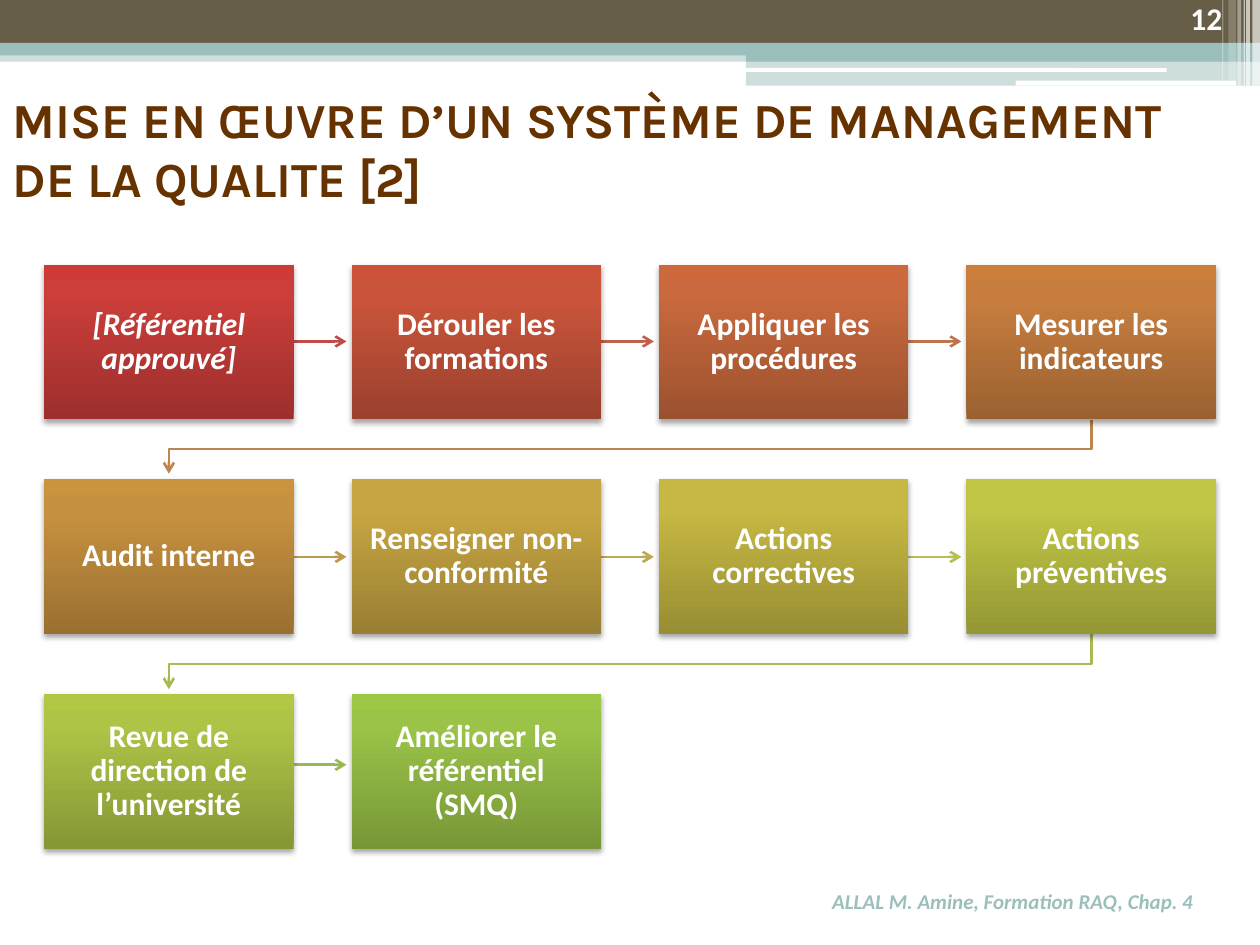
from dataclasses import dataclass

from pptx import Presentation
from pptx.dml.color import RGBColor
from pptx.enum.shapes import MSO_CONNECTOR, MSO_SHAPE
from pptx.enum.text import MSO_ANCHOR, MSO_AUTO_SIZE, PP_ALIGN
from pptx.oxml import parse_xml
from pptx.oxml.ns import nsdecls, qn
from pptx.util import Inches, Pt

RECTANGLE, ROUNDED = MSO_SHAPE.RECTANGLE, MSO_SHAPE.ROUNDED_RECTANGLE
STRAIGHT = MSO_CONNECTOR.STRAIGHT
LEFT, CENTER, RIGHT = PP_ALIGN.LEFT, PP_ALIGN.CENTER, PP_ALIGN.RIGHT
TOP, MIDDLE, BOTTOM = MSO_ANCHOR.TOP, MSO_ANCHOR.MIDDLE, MSO_ANCHOR.BOTTOM
GROW = MSO_AUTO_SIZE.SHAPE_TO_FIT_TEXT


@dataclass(frozen=True)
class Theme:
    white: str = "FFFFFF"
    olive: str = "675E47"
    teal: str = "9CBEBD"
    brown: str = "663300"
    body_font: str = "Calibri"
    title_font: str = "Karla"
    title_size: int = 28
    body_size: int = 18
    footer_size: int = 12
    line_width: float = 1.5


THEME = Theme()

# Header: left, top, width, height, colour, opacity in percent
HEADER_BANDS = [
    (0, 0.4, 10, 0.09, THEME.teal, 50),
    (0, 0, 10, 0.34, THEME.olive, 100),
    (0, 0.34, 10, 0.1, THEME.teal, 100),
    (5.92, 0.39, 4.08, 0.1, THEME.teal, 100),
    (5.92, 0.48, 4.08, 0.2, THEME.teal, 50),
]
HEADER_LINES = [(5.91, 0.54, 3.35, 0.03), (8.06, 0.64, 1.75, 0.04)]
# Header stripes: left, width, height, opacity in percent
HEADER_STRIPES = [
    (9.94, 0.06, 0.68, 65),
    (9.89, 0.03, 0.68, 65),
    (9.87, 0.01, 0.68, 60),
    (9.82, 0.03, 0.68, 40),
    (9.75, 0.06, 0.64, 20),
    (9.7, 0.01, 0.64, 30),
]

# Steps: text, gradient from bottom to top, colour of the arrow to the next step
STEPS = [
    ("[Référentiel approuvé]", ("9C2F2D", "CB3E3A", "CE3B37"), "BF4C48"),
    ("Dérouler les formations", ("9B412E", "CA543B", "CE5239"), "BE604A"),
    ("Appliquer les procédures", ("9B512F", "C9693D", "CD693B"), "BD734C"),
    ("Mesurer les indicateurs", ("9A6130", "C87E3F", "CC7E3C"), "BD864D"),
    ("Audit interne", ("9A7031", "C79240", "CB933E"), "BC994F"),
    ("Renseigner non-conformité", ("997F33", "C7A542", "CAA740"), "BBAA50"),
    ("Actions correctives", ("988E34", "C6B843", "C9BB41"), "BABB52"),
    ("Actions préventives", ("949835", "C0C545", "C3C843"), "A9BA53"),
    ("Revue de direction de l’université", ("859736", "ADC446", "B0C844"), "98B955"),
    ("Améliorer le référentiel (SMQ)", ("779737", "9BC348", "9DC746"), None),
]
GRADIENT_POSITIONS = (0, 80, 100)
COLUMNS = 4
GRID_LEFT, BOX_WIDTH, BOX_HEIGHT, COLUMN_GAP = 0.35, 1.98, 1.23, 0.46
ROW_TOPS = (2.1, 3.8, 5.51)
ARROW_HEIGHTS = (2.71, 4.42, 6.07)
ARROW_MARGIN = 0.04


def write_text(frame, text, *, font=THEME.body_font, size=THEME.body_size,
               color=THEME.white, bold=True, italic=False, align=LEFT,
               anchor=TOP, inset=None, line_spacing=None):
    frame.word_wrap = True
    frame.vertical_anchor = anchor
    if inset is not None:
        frame.margin_left = frame.margin_right = Inches(inset)
        frame.margin_top = frame.margin_bottom = Inches(inset)
    paragraph = frame.paragraphs[0]
    paragraph.alignment = align
    if line_spacing:
        paragraph.line_spacing = line_spacing
    run = paragraph.add_run()
    run.text = text
    run.font.name, run.font.size = font, Pt(size)
    run.font.bold, run.font.italic = bold, italic
    run.font.color.rgb = RGBColor.from_string(color)


class SlideBuilder:
    def __init__(self, presentation, theme):
        self.theme = theme
        self.slide = presentation.slides.add_slide(presentation.slide_layouts[5])

    def title(self, text, *box):
        title = self.slide.shapes.title
        title.left, title.top, title.width, title.height = map(Inches, box)
        write_text(title.text_frame, text, font=self.theme.title_font,
                   size=self.theme.title_size, color=self.theme.brown)
        title.text_frame.auto_size = GROW

    def label(self, text, *box, **text_format):
        label = self.slide.shapes.add_textbox(*map(Inches, box))
        write_text(label.text_frame, text, **text_format)

    def bar(self, *box, color, opacity=100, kind=RECTANGLE):
        shape = self.slide.shapes.add_shape(kind, *map(Inches, box))
        shape.shadow.inherit = False
        shape.line.fill.background()
        shape.fill.solid()
        shape.fill.fore_color.rgb = RGBColor.from_string(color)
        if opacity < 100:
            fill_color = shape.element.spPr.find(qn("a:solidFill"))[0]
            fill_color.append(parse_xml(
                f'<a:alpha {nsdecls("a")} val="{opacity * 1000}"/>'))

    def step_box(self, text, gradient, left, top, italic=False):
        shape = self.slide.shapes.add_shape(
            RECTANGLE, *map(Inches, (left, top, BOX_WIDTH, BOX_HEIGHT)))
        shape.line.fill.background()
        shape.fill.background()
        shape.shadow.inherit = False
        properties = shape.element.spPr
        stops = "".join(
            f'<a:gs pos="{position * 1000}"><a:srgbClr val="{color}"/></a:gs>'
            for position, color in zip(GRADIENT_POSITIONS, gradient))
        properties.replace(properties.find(qn("a:noFill")), parse_xml(
            f'<a:gradFill {nsdecls("a")} rotWithShape="1"><a:gsLst>{stops}</a:gsLst>'
            '<a:lin ang="16200000" scaled="0"/></a:gradFill>'))
        properties.find(qn("a:effectLst")).append(parse_xml(
            f'<a:outerShdw {nsdecls("a")} blurRad="{Pt(3.1)}" dist="{Pt(1.8)}" '
            'dir="5400000" rotWithShape="0"><a:srgbClr val="000000">'
            '<a:alpha val="35000"/></a:srgbClr></a:outerShdw>'))
        write_text(shape.text_frame, text, italic=italic, align=CENTER,
                   anchor=MIDDLE, inset=0.14, line_spacing=0.9)

    def arrow(self, points, color):
        """Draw a straight connector for two points, a bent line for more."""
        points = [(Inches(x), Inches(y)) for x, y in points]
        if len(points) == 2:
            line = self.slide.shapes.add_connector(STRAIGHT, *points[0], *points[1])
        else:
            builder = self.slide.shapes.build_freeform(*points[0])
            builder.add_line_segments(points[1:], close=False)
            line = builder.convert_to_shape()
            line.fill.background()
        line.line.color.rgb = RGBColor.from_string(color)
        line.line.width = Pt(self.theme.line_width)
        properties = line.element.spPr
        properties.find(qn("a:ln")).append(
            parse_xml(f'<a:tailEnd {nsdecls("a")} type="arrow"/>'))
        properties.append(parse_xml(f'<a:effectLst {nsdecls("a")}/>'))


def add_header(builder):
    for *box, color, opacity in HEADER_BANDS:
        builder.bar(*box, color=color, opacity=opacity)
    for box in HEADER_LINES:
        builder.bar(*box, color=THEME.white, kind=ROUNDED)
    for left, width, height, opacity in HEADER_STRIPES:
        builder.bar(left, 0, width, height, color=THEME.white, opacity=opacity)


def add_process(builder):
    for index, (text, gradient, arrow_color) in enumerate(STEPS):
        row, column = divmod(index, COLUMNS)
        left = GRID_LEFT + column * (BOX_WIDTH + COLUMN_GAP)
        right, top = left + BOX_WIDTH, ROW_TOPS[row]
        if arrow_color and column < COLUMNS - 1:
            height = ARROW_HEIGHTS[row]
            end = right + COLUMN_GAP - ARROW_MARGIN
            builder.arrow([(right, height), (end, height)], arrow_color)
        elif arrow_color:
            # Row change: down, back to the first column, down again
            start_x, end_x = left + BOX_WIDTH / 2, GRID_LEFT + BOX_WIDTH / 2
            bottom, next_top = top + BOX_HEIGHT, ROW_TOPS[row + 1]
            bend = (bottom + next_top) / 2
            builder.arrow([(start_x, bottom), (start_x, bend), (end_x, bend),
                           (end_x, next_top - ARROW_MARGIN)], arrow_color)
        builder.step_box(text, gradient, left, top, italic=index == 0)


def main():
    presentation = Presentation()
    presentation.slide_width, presentation.slide_height = Inches(10), Inches(7.5)
    builder = SlideBuilder(presentation, THEME)
    add_header(builder)
    # Slide number, footer and title
    builder.label("12", 8.97, -0.06, 0.83, 0.4, align=RIGHT, anchor=BOTTOM)
    builder.label("ALLAL M. Amine, Formation RAQ, Chap. 4", 0, 7, 9.57, 0.5,
                  size=THEME.footer_size, color=THEME.teal, italic=True, align=RIGHT)
    builder.title("MISE EN ŒUVRE D’UN SYSTÈME DE MANAGEMENT DE LA QUALITE [2]",
                  0, 0.66, 9.8, 1.04)
    add_process(builder)
    presentation.save("out.pptx")


if __name__ == "__main__":
    main()
